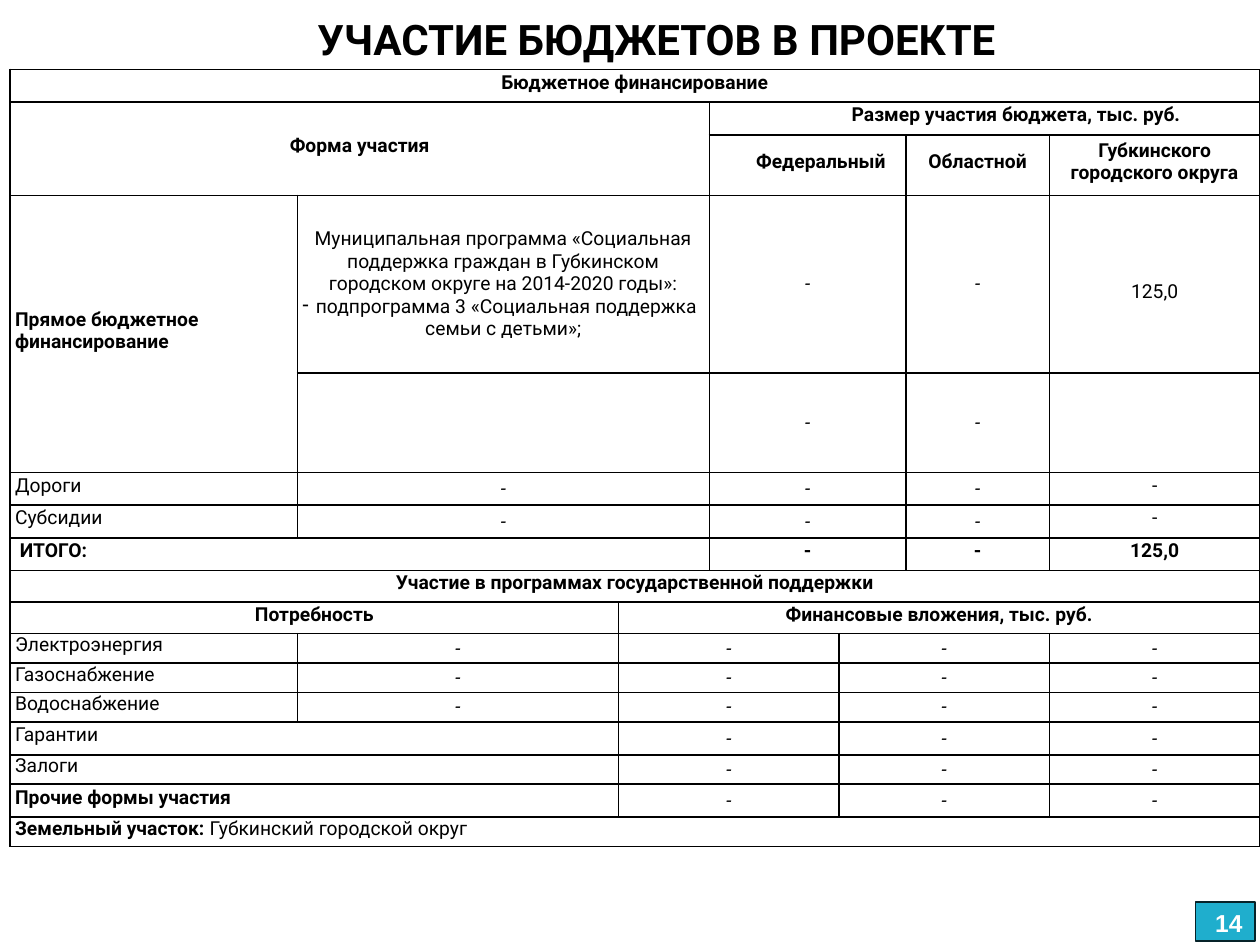
from lxml.etree import SubElement
from pptx import Presentation
from pptx.dml.color import RGBColor
from pptx.enum.shapes import MSO_SHAPE as Shape
from pptx.enum.text import MSO_ANCHOR as Anchor, PP_ALIGN as Align
from pptx.oxml.ns import qn
from pptx.util import Inches, Pt

BLACK = RGBColor(0x00, 0x00, 0x00)
WHITE = RGBColor(0xFF, 0xFF, 0xFF)
TURQUOISE = RGBColor(0x1F, 0xAE, 0xCD)
DARK_TEAL = RGBColor(0x06, 0x23, 0x29)

COLUMN_WIDTHS = [2.28, 2.55, 0.72, 1.03, 0.53, 1.14, 1.67]
ROW_HEIGHTS = [0.26, 0.26, 0.48, 1.41, 0.79, 0.26, 0.26, 0.26, 0.25,
               0.25, 0.23, 0.23, 0.23, 0.26, 0.23, 0.26, 0.23]
BUDGET_COLUMNS = [(3, 2), (5, 1), (6, 1)]
INVESTMENT_COLUMNS = [(2, 2), (4, 2), (6, 1)]


def write_text(paragraph, text, font="Roboto", size=11, color=BLACK, bold=False,
               italic=False, align=Align.CENTER, indent=0, bullet=None):
    """Add a formatted run to a paragraph."""
    properties = paragraph._p.get_or_add_pPr()
    if indent:
        properties.set("marL", str(Inches(indent)))
    if bullet:
        SubElement(properties, qn("a:buChar"), char=bullet)
    paragraph.alignment = align
    run = paragraph.add_run()
    run.text = text
    run.font.name = font
    run.font.size = Pt(size)
    run.font.bold = bold
    run.font.italic = italic
    run.font.color.rgb = color


class BudgetSlide:
    """Draw the elements of the budget slide in one style."""

    def __init__(self, presentation):
        self.slide = presentation.slides.add_slide(presentation.slide_layouts[6])
        self.table = None

    def title(self, text, left, top, width, height):
        """Add the slide title."""
        box = self.slide.shapes.add_textbox(
            Inches(left), Inches(top), Inches(width), Inches(height))
        box.text_frame.word_wrap = True
        box.text_frame.vertical_anchor = Anchor.MIDDLE
        write_text(box.text_frame.paragraphs[0], text, size=24, bold=True)

    def grid(self, left, top):
        """Add the empty bordered table."""
        frame = self.slide.shapes.add_table(
            len(ROW_HEIGHTS), len(COLUMN_WIDTHS), Inches(left), Inches(top),
            Inches(sum(COLUMN_WIDTHS)), Inches(sum(ROW_HEIGHTS)))
        self.table = frame.table
        self.table.first_row = self.table.horz_banding = False
        for column, width in zip(self.table.columns, COLUMN_WIDTHS):
            column.width = Inches(width)
        for row, height in zip(self.table.rows, ROW_HEIGHTS):
            row.height = Inches(height)
        for cell in self.table.iter_cells():
            self.border(cell)
            cell.fill.solid()
            cell.fill.fore_color.rgb = WHITE

    def border(self, cell):
        """Outline a cell in black."""
        for side in ("a:lnL", "a:lnR", "a:lnT", "a:lnB"):
            line = SubElement(cell._tc.get_or_add_tcPr(), qn(side), w=str(Pt(1)))
            fill = SubElement(line, qn("a:solidFill"))
            SubElement(fill, qn("a:srgbClr"), val=str(BLACK))

    def cell(self, row, column, text="", columns=1, rows=1, top=0, bottom=0.05, **style):
        """Merge and fill a cell and return its text frame."""
        cell = self.table.cell(row, column)
        if columns * rows > 1:
            cell.merge(self.table.cell(row + rows - 1, column + columns - 1))
        cell.vertical_anchor = Anchor.MIDDLE
        cell.margin_left = cell.margin_right = Inches(0.04)
        cell.margin_top, cell.margin_bottom = Inches(top), Inches(bottom)
        if text:
            write_text(cell.text_frame.paragraphs[0], text, **style)
        return cell.text_frame

    def heading(self, row, column, text, **style):
        """Fill a bold cell."""
        return self.cell(row, column, text, bold=True, **style)

    def label(self, row, text, **style):
        """Fill a left-aligned cell in the first column."""
        return self.cell(row, 0, text, align=Align.LEFT, **style)

    def dashes(self, row, spans):
        """Fill cells with italic dashes."""
        for column, columns in spans:
            self.cell(row, column, "-", columns=columns, bottom=0, italic=True)

    def page_number(self, text, left, top, width, height):
        """Add the page number box."""
        shape = self.slide.shapes.add_shape(
            Shape.RECTANGLE, Inches(left), Inches(top), Inches(width), Inches(height))
        shape.shadow.inherit = False
        shape.fill.solid()
        shape.fill.fore_color.rgb = TURQUOISE
        shape.line.color.rgb = DARK_TEAL
        shape.line.width = Pt(0.75)
        shape.text_frame.vertical_anchor = Anchor.TOP
        write_text(shape.text_frame.paragraphs[0], text, font="Arial", size=14,
                   color=WHITE, bold=True, align=Align.RIGHT)


def fill_budget(page):
    """Fill the budget financing part."""
    page.heading(0, 0, "Бюджетное финансирование", columns=7)
    page.heading(1, 0, "Форма участия", columns=3, rows=2)
    page.heading(1, 3, "Размер участия бюджета, тыс. руб.", columns=4, indent=0.5)
    page.heading(2, 3, "Федеральный ", columns=2, indent=0.25)
    page.heading(2, 5, "Областной")
    page.heading(2, 6, "Губкинского городского округа")

    page.label(3, "Прямое бюджетное финансирование", rows=2, bold=True)
    program = page.cell(
        3, 1, "Муниципальная программа «Социальная поддержка граждан "
        "в Губкинском городском округе на 2014-2020 годы»:", columns=2, bottom=0)
    write_text(program.add_paragraph(),
               "подпрограмма 3 «Социальная поддержка семьи с детьми»;", bullet="-")
    page.cell(3, 6, "125,0", top=0.18)
    page.cell(4, 1, columns=2)
    for row in (3, 4):
        page.dashes(row, BUDGET_COLUMNS[:2])

    for row, text in enumerate(["Дороги", "Субсидии"], 5):
        page.label(row, text)
        page.dashes(row, [(1, 2)] + BUDGET_COLUMNS[:2])
        page.cell(row, 6, "-")

    page.label(7, " ИТОГО:", columns=3, bold=True)
    for (column, columns), text in zip(BUDGET_COLUMNS, ["-", "-", "125,0"]):
        page.heading(7, column, text, columns=columns)


def fill_support(page):
    """Fill the state support part."""
    page.heading(8, 0, "Участие в программах государственной поддержки", columns=7)
    page.heading(9, 0, "Потребность", columns=2)
    page.heading(9, 2, "Финансовые вложения, тыс. руб.", columns=5)
    for row, text in enumerate(["Электроэнергия", "Газоснабжение", "Водоснабжение"], 10):
        page.label(row, text)
        page.dashes(row, [(1, 1)] + INVESTMENT_COLUMNS)
    for row, text in enumerate(["Гарантии", "Залоги", "Прочие формы участия"], 13):
        page.label(row, text, columns=2, bold=row == 15)
        page.dashes(row, INVESTMENT_COLUMNS)
    land = page.label(16, "Земельный участок: ", columns=7, bold=True)
    write_text(land.paragraphs[0], "Губкинский городской округ", align=Align.LEFT)


def main():
    """Build and save the presentation."""
    presentation = Presentation()
    presentation.slide_width, presentation.slide_height = Inches(10), Inches(7.5)
    page = BudgetSlide(presentation)
    page.title("УЧАСТИЕ БЮДЖЕТОВ В ПРОЕКТЕ", 0.46, 0.02, 9.5, 0.58)
    page.grid(0.08, 0.55)
    fill_budget(page)
    fill_support(page)
    page.page_number("14", 9.49, 7.16, 0.47, 0.31)
    presentation.save("out.pptx")


if __name__ == "__main__":
    main()
